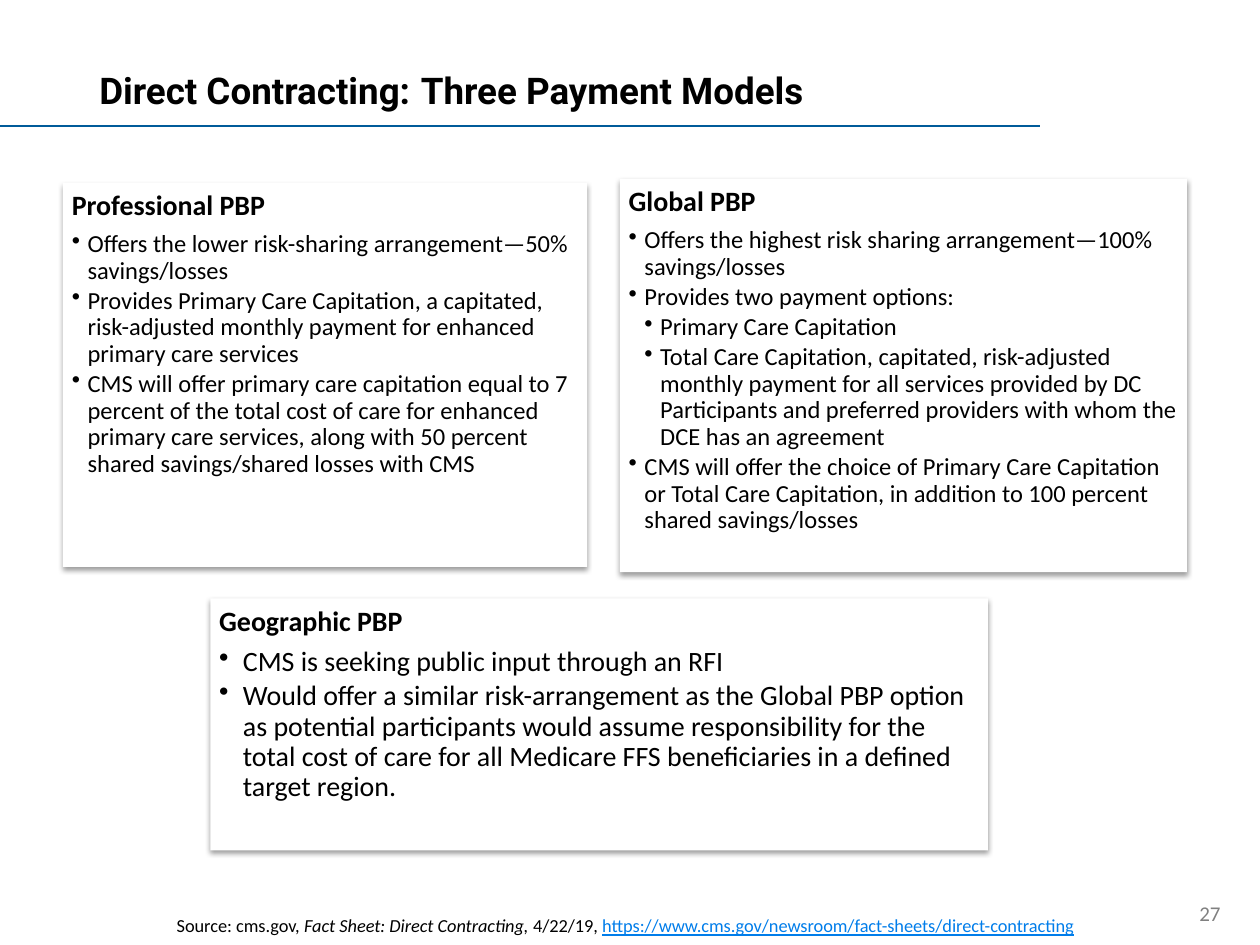
import dataclasses

import lxml.etree
import pptx
import pptx.dml.color
import pptx.enum.shapes
import pptx.enum.text
import pptx.oxml
import pptx.oxml.ns
import pptx.util

COLUMNS, ROWS = 100, 75
CELL = pptx.util.Inches(0.1)
ANCHOR = pptx.enum.text.MSO_ANCHOR
ALIGN = pptx.enum.text.PP_ALIGN


@dataclasses.dataclass(frozen=True)
class Theme:
    ink: str = "000000"
    paper: str = "FFFFFF"
    rule: str = "005B99"
    link: str = "007DEA"
    muted: str = "808080"
    body_font: str = "Calibri"
    title_font: str = "Roboto"
    title: float = 21
    title_gap: float = 24
    heading: float = 16
    body: float = 14
    number: float = 12
    source: float = 10.5


THEME = Theme()


@dataclasses.dataclass(frozen=True)
class Box:
    """An area in grid cells."""
    left: float
    top: float
    width: float
    height: float

    def lengths(self):
        return [round(cells * CELL) for cells in (self.left, self.top, self.width, self.height)]


def rgb(code):
    return pptx.dml.color.RGBColor.from_string(code)


def add_span(para, text, size=THEME.body, font=THEME.body_font, color=THEME.ink,
             bold=False, italic=False, underline=False):
    span = para.add_run()
    span.text = text
    span.font.size = pptx.util.Pt(size)
    span.font.name = font
    span.font.color.rgb = rgb(color)
    span.font.bold, span.font.italic, span.font.underline = bold, italic, underline


def set_frame(frame, inset=None, anchor=ANCHOR.TOP):
    frame.word_wrap = True
    frame.vertical_anchor = anchor
    if inset is not None:
        margin = round(inset * CELL)
        frame.margin_left = frame.margin_right = margin
        frame.margin_top = frame.margin_bottom = margin


def add_text_box(page, box, anchor=ANCHOR.TOP):
    frame = page.shapes.add_textbox(*box.lengths()).text_frame
    set_frame(frame, anchor=anchor)
    return frame


def add_bullet(para, level, indent):
    """Hang a bullet by indent cells, one more indent for each level."""
    properties = para._p.get_or_add_pPr()
    properties.set("marL", str(round(indent * level * CELL)))
    properties.set("indent", str(-round(indent * CELL)))
    bullet = lxml.etree.SubElement(properties, pptx.oxml.ns.qn("a:buChar"))
    bullet.set("char", "•")


def set_spacing(para, size, share):
    """Leave a share of the type size after the paragraph."""
    para.line_spacing = 0.9
    para.space_after = pptx.util.Pt(round(size * share, 1))


def add_shadow(shape):
    shape._element.spPr.append(pptx.oxml.parse_xml(
        f'<a:effectLst {pptx.oxml.ns.nsdecls("a")}>'
        f'<a:outerShdw blurRad="{pptx.util.Pt(3.1)}" dist="{pptx.util.Pt(1.6)}" '
        'dir="5400000" rotWithShape="0">'
        f'<a:srgbClr val="{THEME.ink}"><a:alpha val="38000"/></a:srgbClr>'
        '</a:outerShdw></a:effectLst>'))


def add_rule(page, box):
    left, top, width, _ = box.lengths()
    rule = page.shapes.add_connector(
        pptx.enum.shapes.MSO_CONNECTOR.STRAIGHT, left, top, left + width, top)
    rule.line.color.rgb = rgb(THEME.rule)
    rule.line.width = pptx.util.Pt(0.75)
    lxml.etree.SubElement(rule._element.spPr, pptx.oxml.ns.qn("a:effectLst"))


def add_title(page, box):
    """Title text, with a rule along the bottom of the box from the slide edge."""
    add_rule(page, Box(0, box.top + box.height, 82.5, 0))
    para = add_text_box(page, box, ANCHOR.MIDDLE).paragraphs[0]
    style = {"size": THEME.title, "font": THEME.title_font, "bold": True}
    add_span(para, "Direct Contracting:", **style)
    add_span(para, " ", size=THEME.title_gap, font=THEME.title_font)
    add_span(para, "Three Payment Models", **style)


def add_card(page, box, heading, points, size=THEME.body, indent=1.25):
    """Shadowed card; points are (level, text) pairs."""
    card = page.shapes.add_shape(pptx.enum.shapes.MSO_SHAPE.RECTANGLE, *box.lengths())
    card.fill.solid()
    card.fill.fore_color.rgb = rgb(THEME.paper)
    card.line.fill.background()
    add_shadow(card)
    frame = card.text_frame
    set_frame(frame, inset=0.7)
    para = frame.paragraphs[0]
    para.alignment = ALIGN.LEFT
    set_spacing(para, THEME.heading, 0.35)
    add_span(para, heading, size=THEME.heading, bold=True)
    for level, text in points:
        para = frame.add_paragraph()
        para.alignment = ALIGN.LEFT
        add_bullet(para, level, indent)
        set_spacing(para, size, 0.15)
        add_span(para, text, size=size)


def add_source(page, box):
    frame = add_text_box(page, box)
    frame.margin_right = round(1.7 * CELL)
    para = frame.paragraphs[0]
    para.alignment = ALIGN.CENTER
    for text, style in (
            ("Source: cms.gov, ", {}),
            ("Fact Sheet: Direct Contracting, ", {"italic": True}),
            ("4/22/19, ", {}),
            ("https://www.cms.gov/newsroom/fact-sheets/direct-contracting",
             {"color": THEME.link, "underline": True})):
        add_span(para, text, size=THEME.source, **style)


def add_page_number(page, box):
    para = add_text_box(page, box).paragraphs[0]
    add_span(para, "27", size=THEME.number, color=THEME.muted)


def main():
    deck = pptx.Presentation()
    deck.slide_width, deck.slide_height = COLUMNS * CELL, ROWS * CELL
    page = deck.slides.add_slide(deck.slide_layouts[6])
    add_title(page, Box(6.9, 4, 84, 6))
    add_card(page, Box(5, 14.5, 41.6, 30.5), "Professional PBP", [
        (1, "Offers the lower risk-sharing arrangement—50% savings/losses"),
        (1, "Provides Primary Care Capitation, a capitated, risk-adjusted monthly payment "
            "for enhanced primary care services"),
        (1, "CMS will offer primary care capitation equal to 7 percent of the total cost of "
            "care for enhanced primary care services, along with 50 percent shared "
            "savings/shared losses with CMS"),
    ])
    add_card(page, Box(49.2, 14.2, 45, 31.2), "Global PBP", [
        (1, "Offers the highest risk sharing arrangement—100% savings/losses"),
        (1, "Provides two payment options:"),
        (2, "Primary Care Capitation"),
        (2, "Total Care Capitation, capitated, risk-adjusted monthly payment for all services "
            "provided by DC Participants and preferred providers with whom the DCE has an "
            "agreement"),
        (1, "CMS will offer the choice of Primary Care Capitation or Total Care Capitation, "
            "in addition to 100 percent shared savings/losses"),
    ])
    add_card(page, Box(16.7, 47.5, 61.7, 20), "Geographic PBP", [
        (1, "CMS is seeking public input through an RFI"),
        (1, "Would offer a similar risk-arrangement as the Global PBP option as potential "
            "participants would assume responsibility for the total cost of care for all "
            "Medicare FFS beneficiaries in a defined target region."),
    ], size=THEME.heading, indent=1.88)
    add_source(page, Box(6.9, 72.1, 86.2, 2.9))
    add_page_number(page, Box(94.2, 71, 5.8, 4))
    deck.save("out.pptx")


if __name__ == "__main__":
    main()
